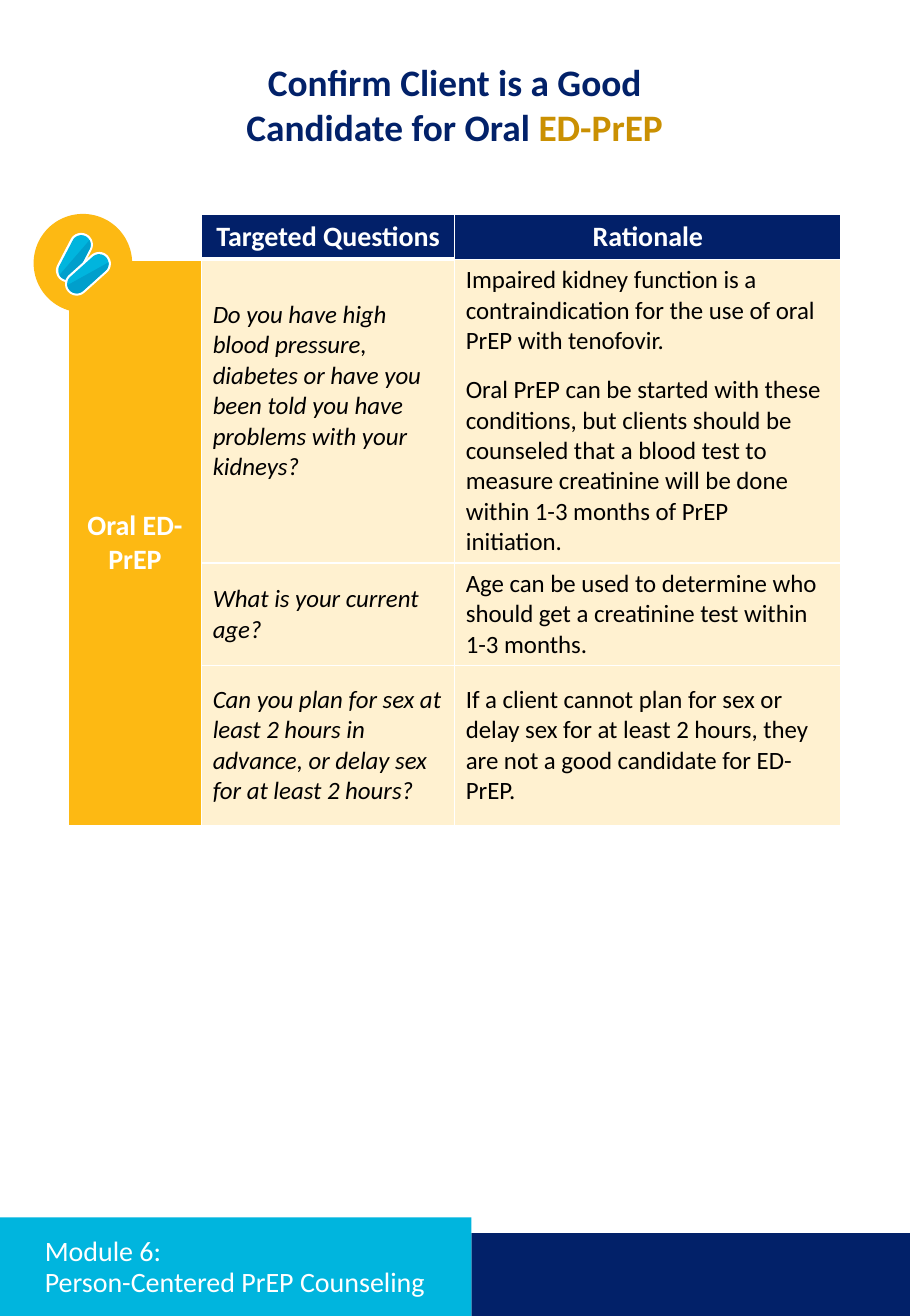
from dataclasses import dataclass
from math import atan2, cos, pi, sin

from pptx import Presentation
from pptx.dml.color import RGBColor
from pptx.enum.shapes import MSO_SHAPE
from pptx.enum.text import MSO_ANCHOR, MSO_AUTO_SIZE, PP_ALIGN
from pptx.oxml.ns import qn
from pptx.oxml.xmlchemy import OxmlElement
from pptx.shapes.autoshape import Shape
from pptx.slide import Slide
from pptx.table import _Cell
from pptx.text.text import Font, _Paragraph
from pptx.util import Emu, Pt

EMU_PER_PX = 4572  # 200 px to the inch


@dataclass(frozen=True)
class Theme:
    font: str = "Calibri"
    navy: str = "022169"
    header_navy: str = "022069"
    cyan: str = "00B5DE"
    shade: str = "009FCC"
    gold: str = "FDB913"
    dark_gold: str = "CA9002"
    cream: str = "FFF1D0"
    white: str = "FFFFFF"
    black: str = "000000"
    heading_size: int = 24
    label_size: int = 18
    cell_size: int = 16
    thin_border: int = 1
    thick_border: int = 3


THEME = Theme()


@dataclass(frozen=True)
class Box:
    left: int
    top: int
    width: int
    height: int


@dataclass(frozen=True)
class Block:
    geometry: MSO_SHAPE
    box: Box
    color: str


@dataclass(frozen=True)
class CellStyle:
    fill: str
    color: str
    size: int
    bold: bool = False
    italic: bool = False
    align: PP_ALIGN = PP_ALIGN.LEFT


@dataclass(frozen=True)
class Pill:
    head: tuple[int, int]
    tail: tuple[int, int]


HEADER = CellStyle(THEME.header_navy, THEME.white, THEME.label_size, bold=True, align=PP_ALIGN.CENTER)
CORNER = CellStyle(THEME.white, THEME.white, THEME.label_size)
METHOD = CellStyle(THEME.gold, THEME.white, THEME.label_size, bold=True, align=PP_ALIGN.CENTER)
QUESTION = CellStyle(THEME.cream, THEME.black, THEME.cell_size, italic=True)
RATIONALE = CellStyle(THEME.cream, THEME.black, THEME.cell_size)

SLIDE_WIDTH, SLIDE_HEIGHT = 1625, 2350
HEADING_BOX = Box(354, 96, 916, 208)
MODULE_BOX = Box(60, 2214, 772, 100)
TABLE_BOX = Box(122, 382, 1380, 1092)
COLUMN_WIDTHS = (238, 452, 690)
ROW_HEIGHTS = (81, 542, 183, 286)
FIRST_QUESTION_BOTTOM_MARGIN = 82

FOOTER_BARS = (
    Block(MSO_SHAPE.RECTANGLE, Box(842, 2202, 783, 148), THEME.navy),
    Block(MSO_SHAPE.RECTANGLE, Box(0, 2174, 842, 176), THEME.cyan),
)
PILL_BADGE = Block(MSO_SHAPE.OVAL, Box(60, 382, 176, 176), THEME.gold)
PILLS = (Pill((145, 437), (121, 483)), Pill((177, 471), (137, 507)))
PILL_RADIUS, PILL_RIM_RADIUS = 17, 21
CAP_POINTS = 17
SHADE_START = 11

TABLE_TEXT = (
    ("", "Targeted Questions", "Rationale"),
    (
        "Oral ED-PrEP",
        "Do you have high blood pressure, diabetes or have you been told you have problems with your kidneys?",
        "Impaired kidney function is a contraindication for the use of oral PrEP with tenofovir.\n"
        "Oral PrEP can be started with these conditions, but clients should be counseled that a blood test "
        "to measure creatinine will be done within 1-3 months of PrEP initiation.",
    ),
    (
        "",
        "What is your current age?",
        "Age can be used to determine who should get a creatinine test within 1-3 months.",
    ),
    (
        "",
        "Can you plan for sex at least 2 hours in advance, or delay sex for at least 2 hours?",
        "If a client cannot plan for sex or delay sex for at least 2 hours, they are not a good candidate for ED-PrEP.",
    ),
)


def px(length: int) -> Emu:
    return Emu(length * EMU_PER_PX)


def place(shape: Shape, box: Box) -> None:
    shape.left, shape.top = px(box.left), px(box.top)
    shape.width, shape.height = px(box.width), px(box.height)


def set_font(font: Font, size: int, color: str, bold: bool = False, italic: bool = False) -> None:
    font.name, font.size = THEME.font, Pt(size)
    font.bold, font.italic = bold, italic
    font.color.rgb = RGBColor.from_string(color)


def paint(shape: Shape, color: str) -> None:
    shape.shadow.inherit = False
    shape.fill.solid()
    shape.fill.fore_color.rgb = RGBColor.from_string(color)
    shape.line.fill.background()


def add_block(slide: Slide, block: Block) -> None:
    box = block.box
    shape = slide.shapes.add_shape(
        block.geometry, px(box.left), px(box.top), px(box.width), px(box.height)
    )
    paint(shape, block.color)


def remove_bullet(paragraph: _Paragraph) -> None:
    properties = paragraph._p.get_or_add_pPr()
    properties.set("marL", "0")
    properties.set("indent", "0")
    properties.append(OxmlElement("a:buNone"))


def add_heading(slide: Slide) -> None:
    heading = slide.placeholders[1]
    place(heading, HEADING_BOX)
    heading.text_frame.auto_size = MSO_AUTO_SIZE.NONE
    paragraph = heading.text_frame.paragraphs[0]
    paragraph.text = "Confirm Client is a Good Candidate for Oral "
    paragraph.add_run().text = "ED-PrEP"
    remove_bullet(paragraph)
    paragraph.alignment = PP_ALIGN.CENTER
    paragraph.space_before = Pt(0)
    for run, color in zip(paragraph.runs, (THEME.navy, THEME.dark_gold)):
        set_font(run.font, THEME.heading_size, color, bold=True)


def add_module_title(slide: Slide) -> None:
    """Fill the title placeholder and bring it in front of the footer bars."""
    title = slide.shapes.title
    place(title, MODULE_BOX)
    title.text_frame.auto_size = MSO_AUTO_SIZE.NONE
    title.text_frame.vertical_anchor = MSO_ANCHOR.MIDDLE
    paragraph = title.text_frame.paragraphs[0]
    paragraph.text = "Module 6:\nPerson-Centered PrEP Counseling"
    paragraph.alignment = PP_ALIGN.LEFT
    paragraph.line_spacing = 0.9
    for run in paragraph.runs:
        set_font(run.font, THEME.label_size, THEME.white)
    slide.shapes.element.append(title.element)


def add_border(cell: _Cell, side: str, width: int) -> None:
    line = OxmlElement(f"a:ln{side}")
    line.set("w", str(Pt(width)))
    fill, color = OxmlElement("a:solidFill"), OxmlElement("a:srgbClr")
    color.set("val", THEME.white)
    fill.append(color)
    line.append(fill)
    cell._tc.get_or_add_tcPr().append(line)


def cell_style(row: int, column: int) -> CellStyle:
    if row == 0:
        return HEADER if column else CORNER
    return (METHOD, QUESTION, RATIONALE)[column]


def fill_cell(cell: _Cell, text: str, row: int, column: int) -> None:
    style = cell_style(row, column)
    for side in "LRTB":
        under_header = column < 2 and (row, side) in ((0, "B"), (1, "T"))
        add_border(cell, side, THEME.thick_border if under_header else THEME.thin_border)
    cell.fill.solid()
    cell.fill.fore_color.rgb = RGBColor.from_string(style.fill)
    cell.vertical_anchor = MSO_ANCHOR.MIDDLE
    if not text:
        return
    cell.text_frame.text = text
    for index, paragraph in enumerate(cell.text_frame.paragraphs):
        paragraph.alignment = style.align
        paragraph.space_before = Pt(12 if index else 0)
        for run in paragraph.runs:
            set_font(run.font, style.size, style.color, style.bold, style.italic)


def add_question_table(slide: Slide) -> None:
    box = TABLE_BOX
    table = slide.shapes.add_table(
        len(ROW_HEIGHTS), len(COLUMN_WIDTHS), px(box.left), px(box.top), px(box.width), px(box.height)
    ).table
    table.first_row = table.horz_banding = False
    for column, width in zip(table.columns, COLUMN_WIDTHS):
        column.width = px(width)
    for row, height in zip(table.rows, ROW_HEIGHTS):
        row.height = px(height)
    for row, texts in enumerate(TABLE_TEXT):
        for column, text in enumerate(texts):
            fill_cell(table.cell(row, column), text, row, column)
    table.cell(1, 0).merge(table.cell(3, 0))
    table.cell(1, 1).margin_bottom = px(FIRST_QUESTION_BOTTOM_MARGIN)


def capsule_points(pill: Pill, radius: int) -> list[tuple[float, float]]:
    """Return the outline clockwise, the head cap first and then the tail cap."""
    (head_x, head_y), (tail_x, tail_y) = pill.head, pill.tail
    start = atan2(tail_y - head_y, tail_x - head_x) + pi / 2
    return [
        (x + radius * cos(angle), y + radius * sin(angle))
        for (x, y), first in ((pill.head, start), (pill.tail, start + pi))
        for angle in (first + pi * step / (CAP_POINTS - 1) for step in range(CAP_POINTS))
    ]


def add_outline(slide: Slide, points: list[tuple[float, float]], color: str) -> None:
    corners = [(round(x * EMU_PER_PX), round(y * EMU_PER_PX)) for x, y in points]
    builder = slide.shapes.build_freeform(*corners[0])
    builder.add_line_segments(corners[1:], close=True)
    paint(builder.convert_to_shape(), color)


def add_pill(slide: Slide, pill: Pill) -> None:
    body = capsule_points(pill, PILL_RADIUS)
    add_outline(slide, capsule_points(pill, PILL_RIM_RADIUS), THEME.white)
    add_outline(slide, body, THEME.cyan)
    add_outline(slide, body[SHADE_START:SHADE_START + CAP_POINTS + 1], THEME.shade)


def main() -> None:
    presentation = Presentation()
    presentation.slide_width, presentation.slide_height = px(SLIDE_WIDTH), px(SLIDE_HEIGHT)
    slide = presentation.slides.add_slide(presentation.slide_layouts[1])
    for bar in FOOTER_BARS:
        add_block(slide, bar)
    add_heading(slide)
    add_question_table(slide)
    add_block(slide, PILL_BADGE)
    for pill in PILLS:
        add_pill(slide, pill)
    add_module_title(slide)
    presentation.save("out.pptx")


if __name__ == "__main__":
    main()
